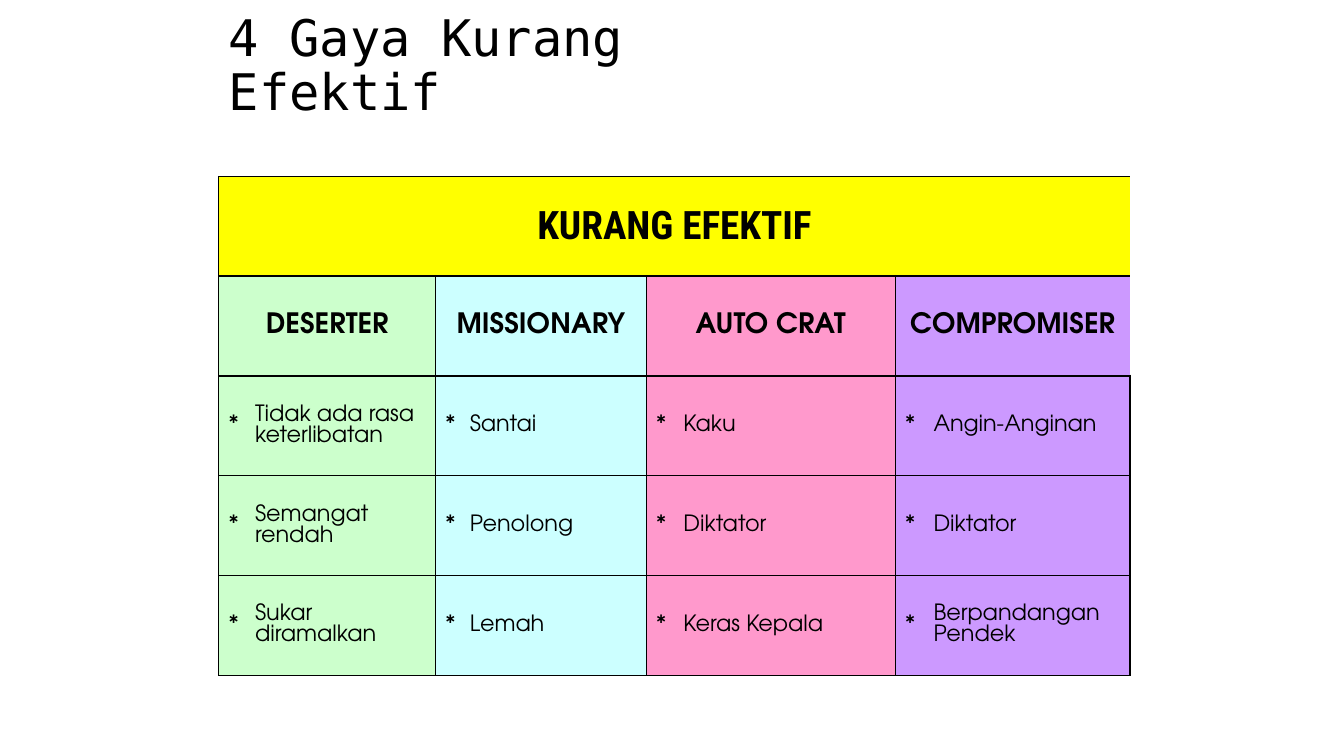
import pptx
import pptx.util
import pptx.dml.color
import pptx.enum.text
import pptx.oxml
import pptx.oxml.ns
from lxml import etree

WIDTH, HEIGHT = 13.33, 7.5
COLUMNS = [0.26, 1.89, 0.23, 1.85, 0.27, 2.2, 0.28, 2.05]
ROW = 0.99
LEFT, TOP = 2.17, 1.75
INK = "000000"
BODY_FONT = "TeX Gyre Adventor"
STYLES = [
    ("DESERTER", "CCFFCC", ["Tidak ada rasa keterlibatan", "Semangat rendah", "Sukar diramalkan"]),
    ("MISSIONARY", "CCFFFF", ["Santai", "Penolong", "Lemah"]),
    ("AUTO CRAT", "FF99CC", ["Kaku", "Diktator", "Keras Kepala"]),
    ("COMPROMISER", "CC99FF", ["Angin-Anginan", "Diktator", "Berpandangan Pendek"]),
]


def color(value):
    return pptx.dml.color.RGBColor.from_string(value)


def set_text(tf, text, size, font, bold=False, centered=False):
    p = tf.paragraphs[0]
    p.text = text
    p.font.size = pptx.util.Pt(size)
    p.font.name = font
    p.font.bold = bold
    p.font.color.rgb = color(INK)
    align = pptx.enum.text.PP_ALIGN
    p.alignment = align.CENTER if centered else align.LEFT
    return p


def add_title(s, text):
    inch = pptx.util.Inches
    sp = s.shapes.add_textbox(inch(LEFT), inch(0.25), inch(4.75), inch(0.83))
    tf = sp.text_frame
    tf.word_wrap = True
    tf.vertical_anchor = pptx.enum.text.MSO_ANCHOR.MIDDLE
    p = set_text(tf, text, 36, "DejaVu Sans Mono")
    p.line_spacing = 0.9


def set_borders(cell, left, right, top, bottom):
    tcPr = cell._tc.get_or_add_tcPr()
    edges = zip(("lnL", "lnR", "lnT", "lnB"), (left, right, top, bottom))
    for i, (tag, width) in enumerate(edges):
        ln = etree.Element(pptx.oxml.ns.qn("a:" + tag), w=str(pptx.util.Pt(width)))
        if width:
            fill = etree.SubElement(ln, pptx.oxml.ns.qn("a:solidFill"))
            etree.SubElement(fill, pptx.oxml.ns.qn("a:srgbClr"), val=INK)
        else:
            etree.SubElement(ln, pptx.oxml.ns.qn("a:noFill"))
        tcPr.insert(i, ln)


def paint_cell(cell, fill, left=1, right=1, top=1, bottom=1):
    cell.fill.solid()
    cell.fill.fore_color.rgb = color(fill)
    cell.vertical_anchor = pptx.enum.text.MSO_ANCHOR.MIDDLE
    set_borders(cell, left, right, top, bottom)


def add_heading(table, row, first, last, text, fill, size, font, top):
    table.cell(row, first).merge(table.cell(row, last))
    for col in range(first, last + 1):
        paint_cell(table.cell(row, col), fill, left=int(col == first),
                   right=int(col == last), top=top, bottom=2)
    set_text(table.cell(row, first).text_frame, text, size, font, True, True)


def add_trait(table, row, col, text, fill):
    top = 2 if row == 2 else 1
    marker, trait = table.cell(row, col), table.cell(row, col + 1)
    paint_cell(marker, fill, right=0, top=top)
    paint_cell(trait, fill, left=0, top=top)
    set_text(marker.text_frame, "*", 16, BODY_FONT)
    set_text(trait.text_frame, text, 16, BODY_FONT)


def add_style_table(s):
    inch = pptx.util.Inches
    rows = 2 + len(STYLES[0][2])
    frame = s.shapes.add_table(rows, len(COLUMNS), inch(LEFT), inch(TOP),
                               inch(sum(COLUMNS)), inch(ROW * rows))
    table = frame.table
    table.first_row = table.horz_banding = False
    for column, width in zip(table.columns, COLUMNS):
        column.width = inch(width)
    for row in table.rows:
        row.height = inch(ROW)
    add_heading(table, 0, 0, len(COLUMNS) - 1, "KURANG EFEKTIF", "FFFF00",
                28, "Roboto Condensed", 1)
    for i, (name, fill, traits) in enumerate(STYLES):
        add_heading(table, 1, 2 * i, 2 * i + 1, name, fill, 20, BODY_FONT, 2)
        for row, trait in enumerate(traits, 2):
            add_trait(table, row, 2 * i, trait, fill)


def main():
    prs = pptx.Presentation()
    prs.slide_width = pptx.util.Inches(WIDTH)
    prs.slide_height = pptx.util.Inches(HEIGHT)
    s = prs.slides.add_slide(prs.slide_layouts[6])
    add_title(s, "4 Gaya Kurang Efektif")
    add_style_table(s)
    prs.save("out.pptx")


if __name__ == "__main__":
    main()
